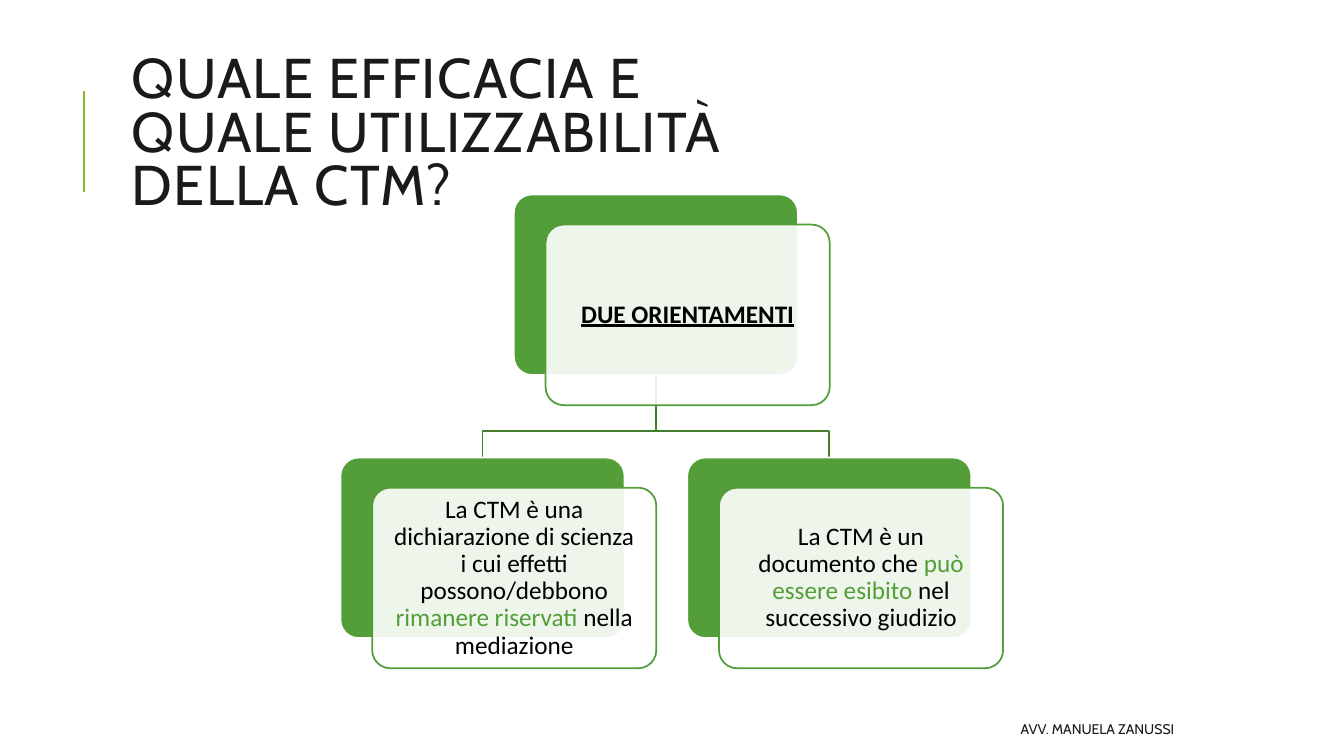
from dataclasses import dataclass

from lxml.etree import SubElement
from pptx import Presentation
from pptx.dml.color import RGBColor
from pptx.enum.shapes import MSO_CONNECTOR, MSO_SHAPE
from pptx.enum.text import MSO_ANCHOR, MSO_AUTO_SIZE, PP_ALIGN
from pptx.oxml import parse_xml
from pptx.oxml.ns import qn
from pptx.util import Cm, Pt


@dataclass(frozen=True)
class Theme:
    white: str = "FFFFFF"
    black: str = "000000"
    ink: str = "1A1A1A"
    green: str = "549E39"
    dark: str = "437F2E"
    lime: str = "8AB833"
    head: str = "Cabin"
    body: str = "Calibri"
    big: float = 40
    mid: float = 18
    small: float = 10
    thin: float = 1.25
    thick: float = 1.5


THEME = Theme()
WIDE, HIGH = 7.16, 4.55
SHIFT_X, SHIFT_Y = 0.8, 0.76
ROOT_X, ROOT_Y = 12.95, 4.9
STEP, LEAF_Y, BEND_Y = 4.37, 11.53, 10.87
A_NS = "http://schemas.openxmlformats.org/drawingml/2006/main"


def tint(value):
    return RGBColor.from_string(value)


def stroke(line, color, width=THEME.thin):
    line.color.rgb = tint(color)
    line.width = Pt(width)


def add_run(para, text, size, color, face=THEME.body, bold=False):
    run = para.add_run()
    run.text = text
    font = run.font
    font.name, font.size, font.bold = face, Pt(size), bold
    font.underline = bold
    font.color.rgb = tint(color)
    return run


def outline(run, color):
    mark = parse_xml(
        f'<a:ln xmlns:a="{A_NS}" w="{Pt(0.75)}"><a:solidFill>'
        f'<a:srgbClr val="{color}"/></a:solidFill></a:ln>'
    )
    run.font._element.insert(0, mark)


def set_frame(frame, align, space=1.0):
    frame.word_wrap = True
    frame.auto_size = MSO_AUTO_SIZE.NONE
    frame.vertical_anchor = MSO_ANCHOR.MIDDLE
    para = frame.paragraphs[0]
    para.alignment = align
    para.line_spacing = space
    return para


def add_title(slide, lines):
    title = slide.shapes.title
    title.left, title.top = Cm(3.07), Cm(1.8)
    title.width, title.height = Cm(17.35), Cm(3.25)
    para = set_frame(title.text_frame, PP_ALIGN.LEFT, 0.8)
    for row, text in enumerate(lines):
        if row:
            para.add_line_break()
        run = add_run(para, text, THEME.big, THEME.ink, THEME.head)
        run.font._element.set("spc", "100")


def add_bar(slide):
    bar = slide.shapes.add_connector(
        MSO_CONNECTOR.STRAIGHT, Cm(2.11), Cm(4.83), Cm(2.11), Cm(2.29)
    )
    stroke(bar.line, THEME.lime, THEME.thick)
    SubElement(bar._element.spPr, qn("a:effectLst"))


def add_foot(slide, text):
    box = slide.shapes.add_textbox(Cm(13.46), Cm(17.98), Cm(16.38), Cm(0.76))
    para = set_frame(box.text_frame, PP_ALIGN.RIGHT)
    add_run(para, text, THEME.small, THEME.ink, THEME.head)


def add_link(slide, side):
    start = ROOT_X + WIDE / 2
    end = start + side * STEP
    pen = slide.shapes.build_freeform(Cm(start), Cm(ROOT_Y + HIGH))
    turns = [(start, BEND_Y), (end, BEND_Y), (end, LEAF_Y)]
    pen.add_line_segments([(Cm(x), Cm(y)) for x, y in turns], close=False)
    link = pen.convert_to_shape()
    link.fill.background()
    link.shadow.inherit = False
    stroke(link.line, THEME.dark)


def add_plate(slide, left, top, fill, edge):
    plate = slide.shapes.add_shape(
        MSO_SHAPE.ROUNDED_RECTANGLE, Cm(left), Cm(top), Cm(WIDE), Cm(HIGH)
    )
    plate.adjustments[0] = 0.1
    plate.shadow.inherit = False
    plate.fill.solid()
    plate.fill.fore_color.rgb = tint(fill)
    stroke(plate.line, edge)
    return plate


def add_card(slide, left, top, parts, bold=False):
    add_plate(slide, left, top, THEME.green, THEME.white)
    front = add_plate(
        slide, left + SHIFT_X, top + SHIFT_Y, THEME.white, THEME.green
    )
    shade = front._element.spPr.find(qn("a:solidFill"))[0]
    SubElement(shade, qn("a:alpha"), val="90000")
    frame = front.text_frame
    frame.margin_left = frame.margin_right = Cm(0.32)
    frame.margin_top = frame.margin_bottom = Cm(0.32)
    para = set_frame(frame, PP_ALIGN.CENTER, 0.9)
    for text, color in parts:
        run = add_run(para, text, THEME.mid, color, bold=bold)
        if color == THEME.green:
            outline(run, color)


def main():
    deck = Presentation()
    deck.slide_width, deck.slide_height = Cm(33.87), Cm(19.05)
    slide = deck.slides.add_slide(deck.slide_layouts[5])
    add_bar(slide)
    add_title(slide, ["QUALE EFFICACIA E ", "QUALE UTILIZZABILITÀ DELLA CTM?"])
    add_foot(slide, "AVV. MANUELA ZANUSSI")
    for side in (1, -1):
        add_link(slide, side)
    add_card(slide, ROOT_X, ROOT_Y, [("DUE ORIENTAMENTI", THEME.black)], True)
    leaves = {
        -1: [
            ("La CTM è una dichiarazione di scienza i cui effetti "
             "possono/debbono ", THEME.black),
            ("rimanere riservati", THEME.green),
            (" nella mediazione", THEME.black),
        ],
        1: [
            ("La CTM è un documento che ", THEME.black),
            ("può essere esibito ", THEME.green),
            ("nel successivo giudizio", THEME.black),
        ],
    }
    for side, parts in leaves.items():
        add_card(slide, ROOT_X + side * STEP, LEAF_Y, parts)
    deck.save("out.pptx")


if __name__ == "__main__":
    main()
